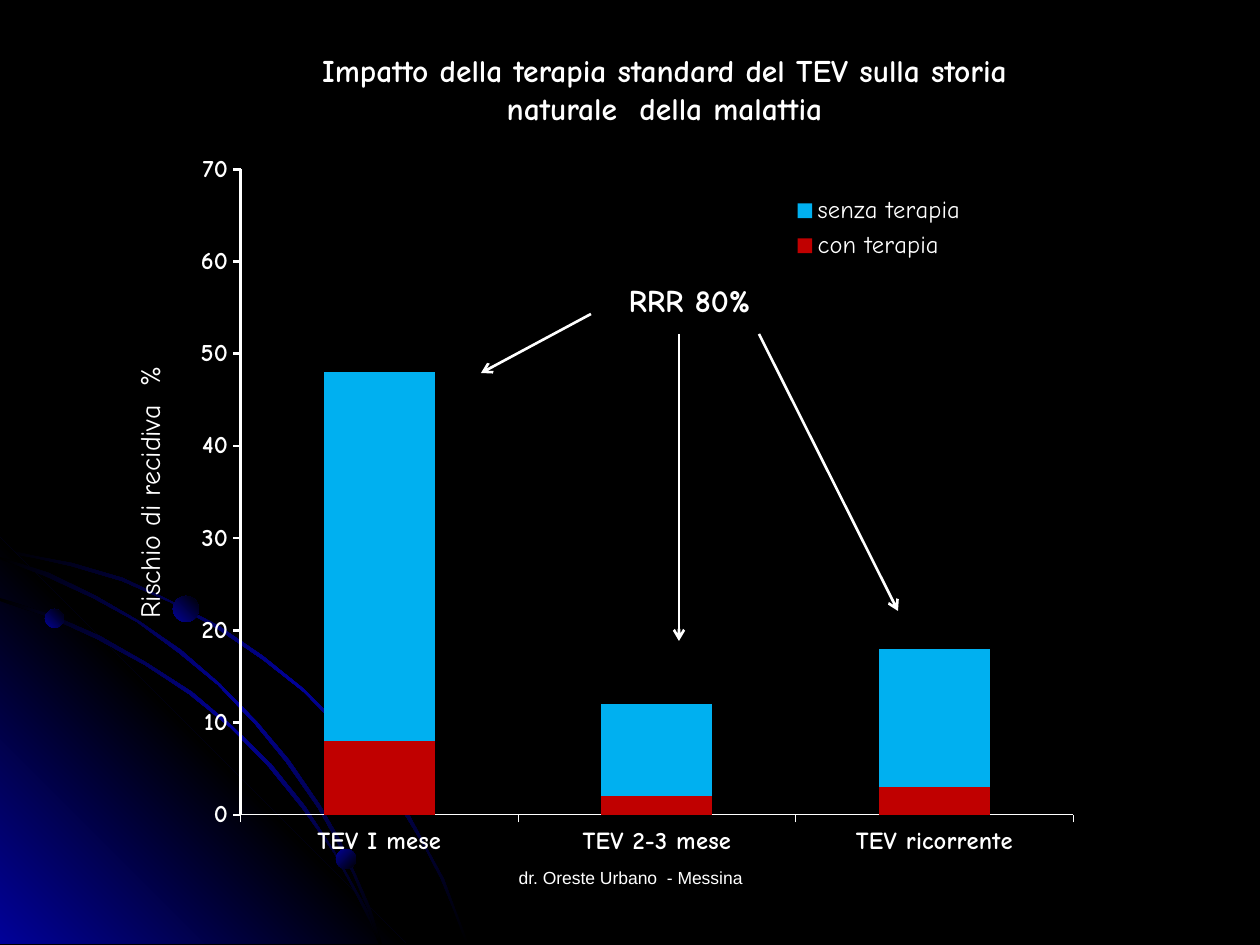
from lxml import etree
from pptx import Presentation
from pptx.chart.data import CategoryChartData
from pptx.dml.color import RGBColor
from pptx.enum.chart import XL_CHART_TYPE, XL_LEGEND_POSITION, XL_TICK_MARK
from pptx.enum.shapes import MSO_CONNECTOR, MSO_SHAPE
from pptx.enum.text import PP_ALIGN
from pptx.oxml import parse_xml
from pptx.oxml.ns import nsdecls, qn
from pptx.util import Pt

STACKED = XL_CHART_TYPE.COLUMN_STACKED
RIGHT = XL_LEGEND_POSITION.RIGHT
OUTSIDE, NO_TICK = XL_TICK_MARK.OUTSIDE, XL_TICK_MARK.NONE
STRAIGHT = MSO_CONNECTOR.STRAIGHT
OVAL = MSO_SHAPE.OVAL
CENTER = PP_ALIGN.CENTER

PX = 914400 / 126
THEME = {
    "black": "000000", "glow": "010199", "white": "FFFFFF",
    "red": "C00000", "sky": "00B0F0",
    "font": "Comic Neue", "footer_font": "Arial",
    "title": 18, "axis_title": 16, "label": 14, "footer": 10,
}
BLACK, GLOW = THEME["black"], THEME["glow"]
WHITE = RGBColor.from_string(THEME["white"])


def fill_gradient(sp, colors, angle):
    """Fill with evenly spaced colours, angle clockwise in degrees; no line or shadow."""
    step = 100000 // (len(colors) - 1)
    stops = "".join(f'<a:gs pos="{i * step}"><a:srgbClr val="{c}"/></a:gs>'
                    for i, c in enumerate(colors))
    sp.shadow.inherit = False
    sp.line.fill.background()
    sp._element.spPr.find(qn("a:ln")).addprevious(parse_xml(
        f'<a:gradFill {nsdecls("a")} rotWithShape="1"><a:gsLst>{stops}</a:gsLst>'
        f'<a:lin ang="{angle * 60000}" scaled="1"/></a:gradFill>'))


def place(parent, index, **values):
    """Give a chart part a manual layout, as fractions of the chart."""
    for old in parent.findall(qn("c:layout")):
        parent.remove(old)
    items = "".join(f'<c:{k} val="{v}"/>' for k, v in values.items())
    parent.insert(index, parse_xml(
        f'<c:layout {nsdecls("c")}><c:manualLayout>{items}</c:manualLayout></c:layout>'))


prs = Presentation()
prs.slide_width, prs.slide_height = round(1260 * PX), round(945 * PX)
s = prs.slides.add_slide(prs.slide_layouts[6])
s.background.fill.solid()
s.background.fill.fore_color.rgb = RGBColor.from_string(BLACK)

# Background: corner glow, three arcs and their dots
ARC = [BLACK, GLOW, BLACK]
outer_arc = [
    (72, 563), (35, 556), (0, 548), (0, 552), (35, 558), (71, 566), (122, 581),
    (170, 602), (218, 629), (262, 659), (304, 692), (341, 730), (375, 771),
    (407, 818), (425, 848), (441, 879), (454, 911), (466, 944), (469, 944),
    (456, 911), (444, 879), (427, 848), (410, 816), (378, 770), (343, 728),
    (305, 690), (263, 656), (219, 626), (171, 601), (123, 578)]
corner = [(406, 944), (0, 944), (0, 538)]
inner_arc = [
    (359, 900), (370, 922), (379, 944), (382, 944), (373, 920), (360, 897),
    (335, 852), (305, 806), (271, 764), (232, 726), (192, 692), (147, 663),
    (100, 636), (52, 615), (0, 598), (0, 601), (49, 617), (97, 639), (145, 665),
    (189, 694), (231, 728), (268, 766), (302, 808), (334, 853)]
middle_arc = [
    (0, 557), (0, 559), (45, 576), (93, 598), (137, 622), (179, 653), (218, 685),
    (255, 724), (286, 762), (318, 808), (336, 840), (353, 874), (368, 910),
    (379, 944), (382, 944), (370, 907), (355, 873), (339, 838), (320, 805),
    (289, 760), (257, 722), (220, 684), (181, 650), (139, 621), (96, 596), (49, 573)]
for points, colors, angle in [
        (outer_arc, ARC, 45), (corner, [GLOW, BLACK, GLOW], 315),
        (inner_arc, ARC, 45), (middle_arc, ARC, 45)]:
    builder = s.shapes.build_freeform(*points[0], scale=PX)
    builder.add_line_segments(points[1:], close=True)
    fill_gradient(builder.convert_to_shape(), colors, angle)

for x, y, size, angle in [(45, 609, 19, 315), (336, 849, 20, 45), (173, 596, 26, 315)]:
    sp = s.shapes.add_shape(OVAL, *(round(v * PX) for v in (x, y, size, size)))
    fill_gradient(sp, [GLOW, BLACK], angle)

# Stacked column chart
data = CategoryChartData()
data.categories = ["TEV I mese", "TEV 2-3 mese", "TEV ricorrente"]
data.add_series("con terapia", [8, 2, 3])
data.add_series("senza terapia", [40, 10, 15])
frame = s.shapes.add_chart(STACKED, *(round(v * PX) for v in (64, 106, 1045, 764)), data)
chart = frame.chart
chart.has_title = False
chart.font.size = Pt(THEME["title"])
chart.font.name = THEME["footer_font"]
chart.font.color.rgb = WHITE

plot = chart.plots[0]
plot.gap_width, plot.overlap, plot.vary_by_categories = 150, 100, False
for series, color in zip(plot.series, ("red", "sky")):
    series.format.fill.solid()
    series.format.fill.fore_color.rgb = RGBColor.from_string(THEME[color])

chart.has_legend = True
legend = chart.legend
legend.position, legend.include_in_layout = RIGHT, False

cat_axis, val_axis = chart.category_axis, chart.value_axis
for name, value in {"minimum_scale": 0, "maximum_scale": 70, "major_unit": 10,
                    "has_major_gridlines": False}.items():
    setattr(val_axis, name, value)
for axis, width in [(cat_axis, 0.75), (val_axis, 1.5)]:
    axis.major_tick_mark, axis.minor_tick_mark = OUTSIDE, NO_TICK
    axis.format.line.color.rgb = WHITE
    axis.format.line.width = Pt(width)

title = val_axis.axis_title
title.text_frame.text = "Rischio di recidiva  %"
title._element.find(".//" + qn("a:bodyPr")).set("rot", "-5400000")
title_font = title.text_frame.paragraphs[0].runs[0].font
for font, size, bold in [
        (cat_axis.tick_labels.font, "label", True), (val_axis.tick_labels.font, "label", True),
        (legend.font, "label", False), (title_font, "axis_title", False)]:
    font.name, font.size, font.bold = THEME["font"], Pt(THEME[size]), bold
    font.color.rgb = WHITE

chart_xml = chart._chartSpace.find(qn("c:chart"))
plot_area = chart_xml.find(qn("c:plotArea"))
place(plot_area, 0, layoutTarget="inner", xMode="edge", yMode="edge",
      x=0.169, y=0.083, w=0.797, h=0.845)
place(legend._element, 1, xMode="edge", yMode="edge", x=0.68, y=0.11, w=0.2, h=0.1)
place(title._element, 1, xMode="edge", yMode="edge", x=0.06, y=0.335)
no_fill = f'<c:spPr {nsdecls("c", "a")}><a:noFill/><a:ln><a:noFill/></a:ln></c:spPr>'
plot_area.append(parse_xml(no_fill))
chart_xml.addnext(parse_xml(no_fill))

# Heading, risk reduction label and footer
for text, box, font, size, bold in [
        ("Impatto della terapia standard del TEV sulla storia naturale  della malattia",
         (302, 45, 725, 89), "font", "title", True),
        ("RRR 80%", (600, 275, 179, 50), "font", "title", True),
        ("dr. Oreste Urbano  - Messina", (431, 861, 399, 66), "footer_font", "footer", False)]:
    tf = s.shapes.add_textbox(*(round(v * PX) for v in box)).text_frame
    tf.word_wrap = True
    p = tf.paragraphs[0]
    p.alignment = CENTER
    r = p.add_run()
    r.text = text
    for name, value in {"name": THEME[font], "size": Pt(THEME[size]), "bold": bold}.items():
        setattr(r.font, name, value)
    r.font.color.rgb = WHITE

# Arrows from the label to each column
for ends in [(591, 314, 481, 373), (679, 334, 679, 641), (759, 334, 898, 611)]:
    arrow = s.shapes.add_connector(STRAIGHT, *(round(v * PX) for v in ends))
    arrow.line.color.rgb = WHITE
    arrow.line.width = Pt(1.5)
    etree.SubElement(arrow.line._get_or_add_ln(), qn("a:tailEnd"), type="arrow")
    etree.SubElement(arrow._element.spPr, qn("a:effectLst"))

prs.save("out.pptx")
